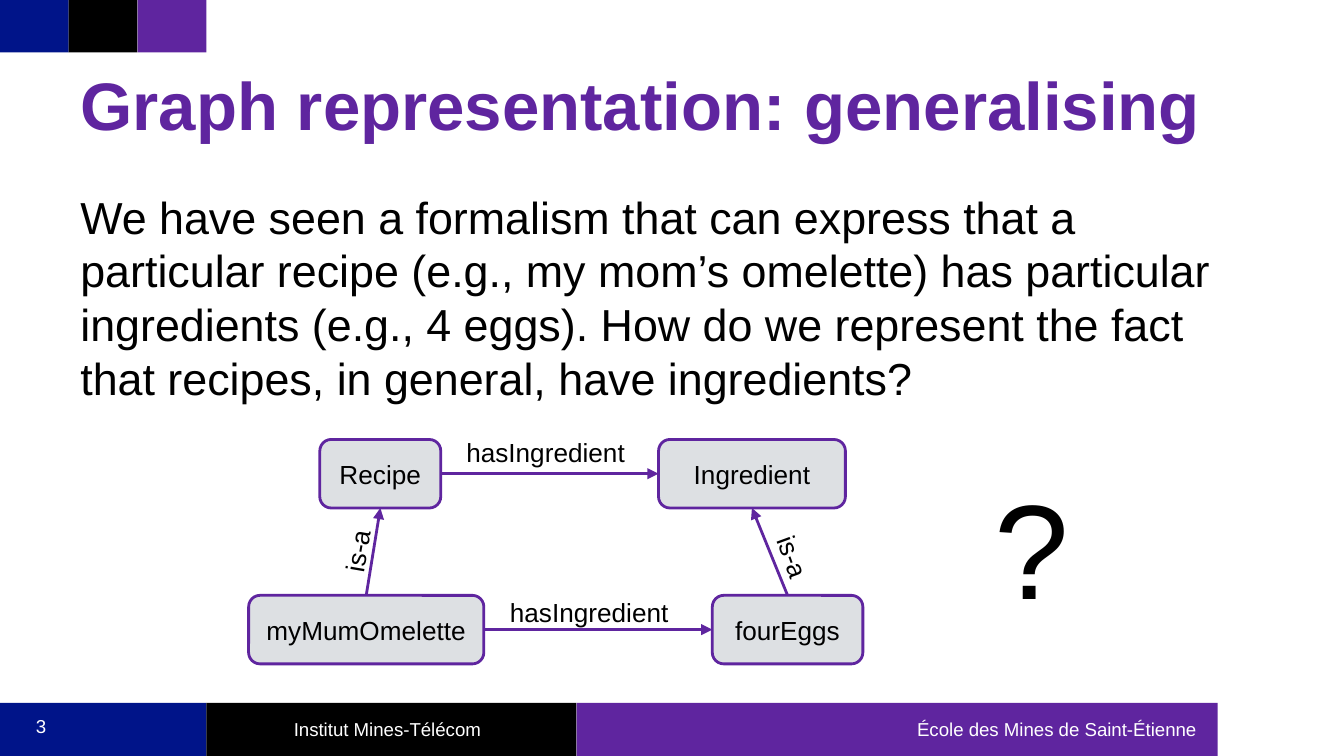
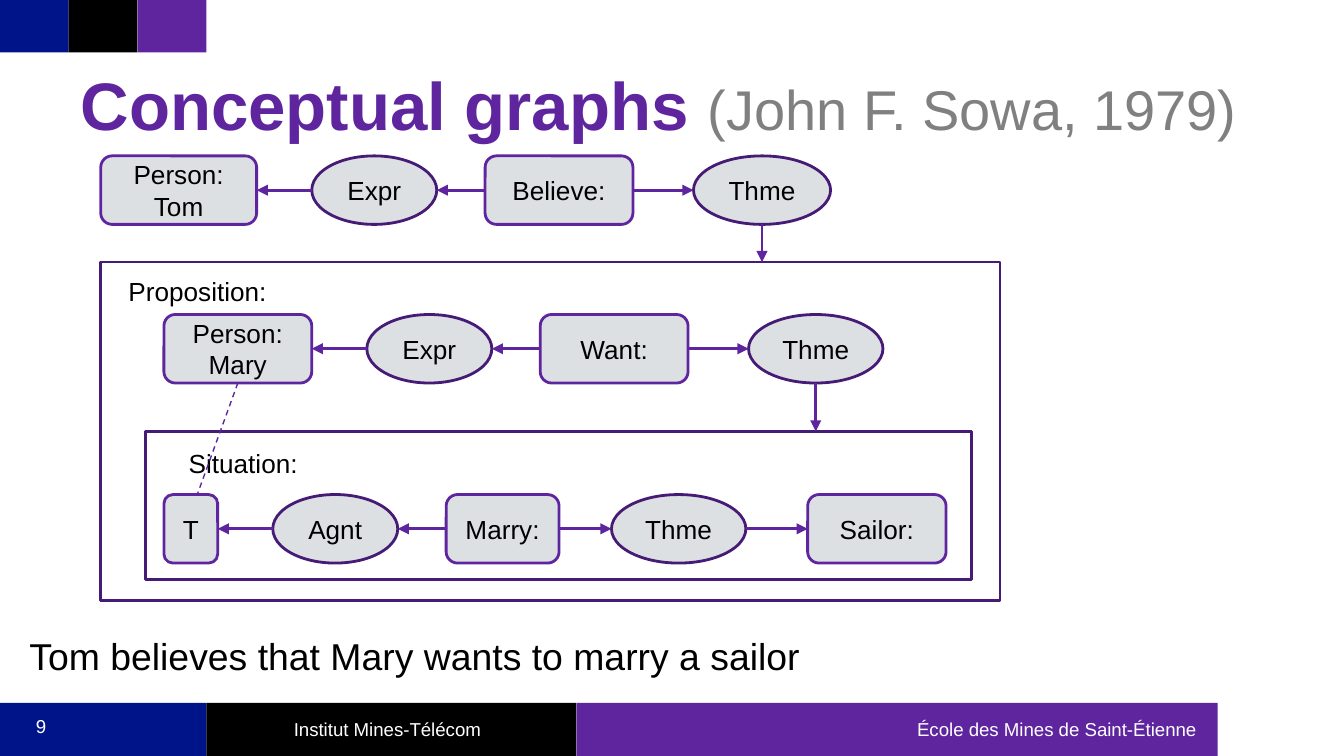
from lxml import etree
from pptx import Presentation
from pptx.dml.color import RGBColor
from pptx.enum.dml import MSO_LINE
from pptx.enum.shapes import MSO_CONNECTOR, MSO_SHAPE
from pptx.enum.text import MSO_ANCHOR, MSO_AUTO_SIZE, PP_ALIGN
from pptx.oxml.ns import qn
from pptx.util import Inches, Pt

NAVY = RGBColor(0x00, 0x14, 0x89)
BLACK = RGBColor(0x00, 0x00, 0x00)
WHITE = RGBColor(0xFF, 0xFF, 0xFF)
PURPLE = RGBColor(0x5F, 0x25, 0x9F)
PLUM = RGBColor(0x46, 0x1B, 0x76)
SILVER = RGBColor(0xDD, 0xE0, 0xE3)
GREY = RGBColor(0x80, 0x80, 0x80)

RECT, ROUND, OVAL = MSO_SHAPE.RECTANGLE, MSO_SHAPE.ROUNDED_RECTANGLE, MSO_SHAPE.OVAL
STRAIGHT, DASH = MSO_CONNECTOR.STRAIGHT, MSO_LINE.DASH
LEFT, CENTER, RIGHT = PP_ALIGN.LEFT, PP_ALIGN.CENTER, PP_ALIGN.RIGHT
TOP, MIDDLE, BOTTOM = MSO_ANCHOR.TOP, MSO_ANCHOR.MIDDLE, MSO_ANCHOR.BOTTOM
FIXED = MSO_AUTO_SIZE.NONE

FONT = "Arial"
COLS, ROWS = 100, 56.25
NODE = 5.1
WEST, EAST, NORTH, SOUTH = (0, 0.5), (1, 0.5), (0.5, 0), (0.5, 1)


class Deck:
    """Holds the style and the current slide; lengths are grid columns and rows."""

    def __init__(self):
        self.prs = Presentation()
        self.prs.slide_width, self.prs.slide_height = Inches(10), Inches(5.625)
        self.slide = None

    def grid(self, x, y, w, h):
        col = self.prs.slide_width / COLS
        row = self.prs.slide_height / ROWS
        return round(x * col), round(y * row), round(w * col), round(h * row)

    def letter(self, shape, runs, align=CENTER, anchor=MIDDLE, pad=(1, 1, 1, 1)):
        """Fill a shape with one paragraph of (text, size, colour, bold) runs."""
        frame = shape.text_frame
        frame.word_wrap, frame.auto_size = True, FIXED
        frame.vertical_anchor = anchor
        (frame.margin_left, frame.margin_top,
         frame.margin_right, frame.margin_bottom) = self.grid(*pad)
        para = frame.paragraphs[0]
        para.alignment = align
        for text, size, color, bold in runs:
            run = para.add_run()
            run.text = text
            font = run.font
            font.name, font.size, font.bold = FONT, Pt(size), bold
            font.color.rgb = color

    def shape(self, kind, box, fill=None, line=None):
        item = self.slide.shapes.add_shape(kind, *self.grid(*box))
        item.shadow.inherit = False
        if fill is None:
            item.fill.background()
        else:
            item.fill.solid()
            item.fill.fore_color.rgb = fill
        if line is None:
            item.line.fill.background()
        else:
            item.line.color.rgb = line
            item.line.width = Pt(1.5)
        return item

    def text(self, words, box, size=14, align=CENTER, turn=0,
             color=BLACK, anchor=TOP, pad=(1, 1, 1, 1)):
        item = self.slide.shapes.add_textbox(*self.grid(*box))
        item.rotation = turn
        self.letter(item, [(words, size, color, False)], align, anchor, pad)

    def start(self, number, *title):
        self.slide = self.prs.slides.add_slide(self.prs.slide_layouts[5])
        for i, color in enumerate((NAVY, BLACK, PURPLE)):
            self.shape(RECT, (5.12 * i, 0, 5.12, 3.9), color)
        bands = (
            (0, 15.35, NAVY, "", CENTER),
            (15.35, 27.55, BLACK, "Institut Mines-Télécom", CENTER),
            (42.9, 47.7, PURPLE, "École des Mines de Saint-Étienne", RIGHT),
        )
        for x, w, color, words, align in bands:
            band = self.shape(RECT, (x, 52.3, w, 3.95), color)
            if words:
                self.letter(band, [(words, 10, WHITE, False)], align, pad=(1, 0.5, 1.6, 0.5))
        self.text(str(number), (0.1, 51.9, 5.9, 4.3), 10, color=WHITE, anchor=MIDDLE)
        head = self.slide.shapes.title
        head.left, head.top, head.width, head.height = self.grid(5, 2.3, 90, 9.4)
        self.letter(head, title, LEFT, BOTTOM)

    def node(self, words, x, y, w, kind=ROUND):
        edge, pad = (PLUM, (0, 0, 0, 0)) if kind == OVAL else (PURPLE, (1, 1, 1, 1))
        item = self.shape(kind, (x, y, w, NODE), SILVER, edge)
        self.letter(item, [(words, 14, BLACK, False)], pad=pad)
        return item

    def link(self, a, b, out, into, dashed=False):
        """Join two shapes at points given as shares of their boxes."""
        ends = [v for s, (fx, fy) in ((a, out), (b, into))
                for v in (round(s.left + fx * s.width), round(s.top + fy * s.height))]
        item = self.slide.shapes.add_connector(STRAIGHT, *ends)
        item.line.color.rgb = PURPLE
        item.line.width = Pt(0.75 if dashed else 1.5)
        props = item.element.spPr
        if dashed:
            item.line.dash_style = DASH
        else:
            etree.SubElement(props.find(qn("a:ln")), qn("a:tailEnd"), type="triangle")
        etree.SubElement(props, qn("a:effectLst"))

    def chain(self, y, *parts):
        """Draw boxes and ovals in turn, with arrows leading away from the third."""
        nodes = [self.node(words, x, y, w, OVAL if i % 2 else ROUND)
                 for i, (words, x, w) in enumerate(parts)]
        for i, (a, b) in enumerate(zip(nodes, nodes[1:])):
            if i < 2:
                self.link(b, a, WEST, EAST)
            else:
                self.link(a, b, EAST, WEST)
        return nodes

    def frame(self, words, box, label):
        item = self.shape(RECT, box, line=PLUM)
        self.text(words, (*label, 14.2, NODE))
        return item


def general(deck):
    deck.start(3, ("Graph representation: generalising", 36, PURPLE, True))
    deck.text(
        "We have seen a formalism that can express that a particular recipe "
        "(e.g., my mom’s omelette) has particular ingredients (e.g., 4 eggs). "
        "How do we represent the fact that recipes, in general, have ingredients?",
        (5, 13.1, 90, 40.7), 24, LEFT)
    dish = deck.node("myMumOmelette", 18.5, 44.3, 17.5)
    eggs = deck.node("fourEggs", 53, 44.3, 11.2)
    recipe = deck.node("Recipe", 23.8, 32.7, 9)
    part = deck.node("Ingredient", 49, 32.7, 13.9)
    for a, b, out, into in (
        (dish, eggs, EAST, WEST), (recipe, part, EAST, WEST),
        (dish, recipe, NORTH, SOUTH), (eggs, part, NORTH, SOUTH),
    ):
        deck.link(a, b, out, into)
    deck.text("hasIngredient", (36, 43.4, 15.7, NODE))
    deck.text("hasIngredient", (33.5, 31.5, 14.2, NODE))
    deck.text("is-a", (22.6, 38.5, 8.7, NODE), turn=279.8)
    deck.text("is-a", (54.3, 39, 8.7, NODE), turn=69.9)
    deck.text("?", (70.5, 34.1, 12.6, 13.1), 72, pad=(1, 0.5, 1, 0.5))


def graphs(deck):
    deck.start(9, ("Conceptual graphs ", 36, PURPLE, True),
               ("(John F. Sowa, 1979)", 30, GREY, False))
    deck.text("Tom believes that Mary wants to marry a sailor",
              (1.2, 46.1, 93.8, 7.7), 20, LEFT)
    claim = deck.frame("Proposition:", (7.5, 19.5, 66.9, 25.2), (7.6, 19.5))
    state = deck.frame("Situation:", (10.8, 32.1, 61.5, 11), (11, 32.3))
    tom = deck.chain(11.6, ("Person: Tom", 7.5, 11.6), ("Expr", 23.2, 9.3),
                     ("Believe:", 36.1, 11), ("Thme", 51.6, 10.2))
    mary = deck.chain(23.4, ("Person: Mary", 12.2, 11), ("Expr", 27.3, 9.3),
                      ("Want:", 40.2, 11), ("Thme", 55.7, 10))
    wed = deck.chain(36.8, ("T", 12.2, 4), ("Agnt", 20.3, 9.3), ("Marry:", 33.2, 8.4),
                     ("Thme", 45.5, 10), ("Sailor:", 60.1, 10.3))
    for theme, goal in ((tom[3], claim), (mary[3], state)):
        share = (theme.left + theme.width / 2 - goal.left) / goal.width
        deck.link(theme, goal, SOUTH, (share, 0))
    deck.link(mary[0], wed[0], SOUTH, (0.62, 0), dashed=True)


def main():
    deck = Deck()
    general(deck)
    graphs(deck)
    deck.prs.save("out.pptx")


if __name__ == "__main__":
    main()
